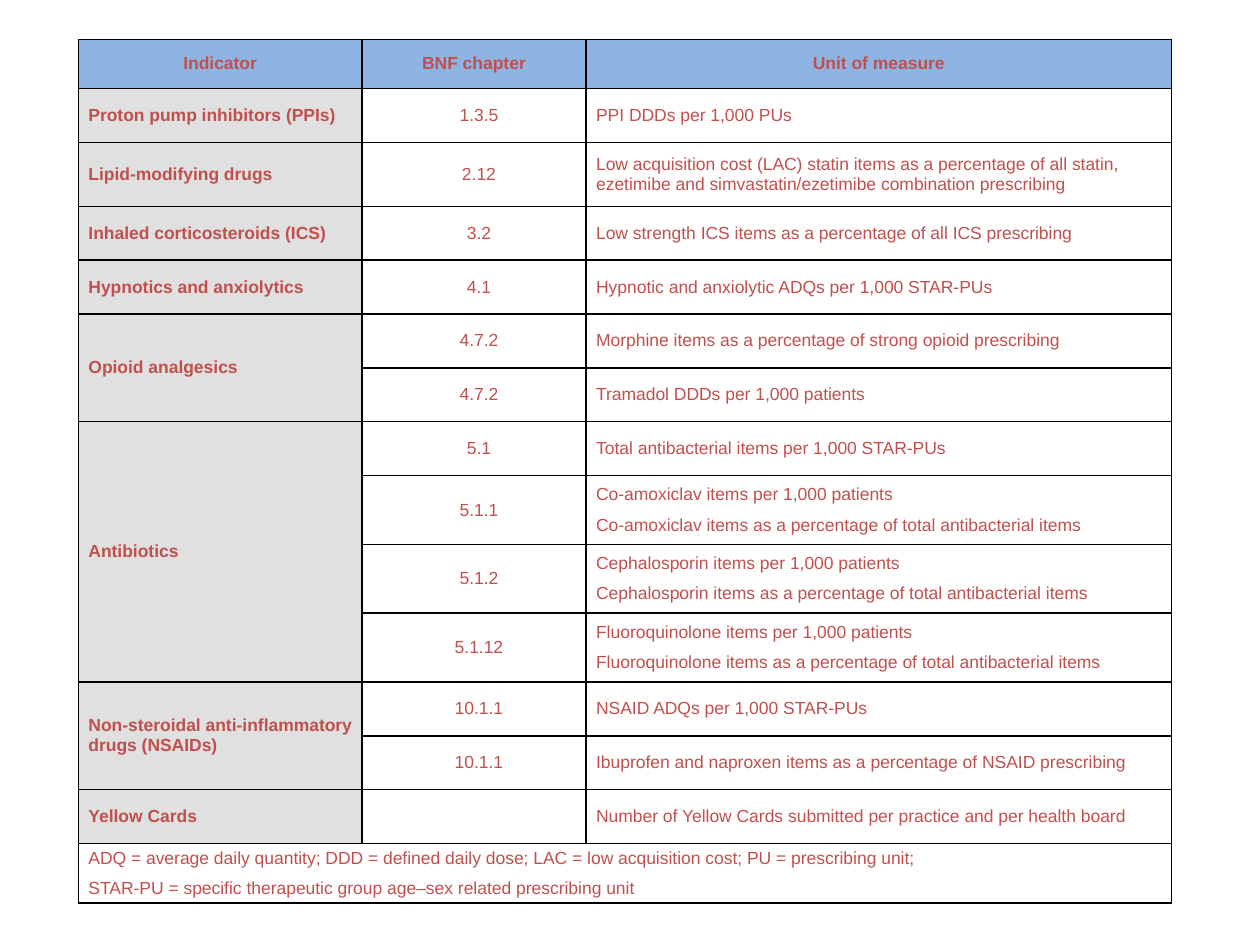
from dataclasses import dataclass

from lxml import etree
from pptx import Presentation
from pptx import util as u
from pptx.dml import color
from pptx.enum import text
from pptx.oxml import ns


@dataclass(frozen=True)
class Theme:
    font: str = "Arial"
    size: float = 10
    ink: str = "C0504D"
    header: str = "8EB4E3"
    label: str = "E0E0E0"
    plain: str = "FFFFFF"
    border: str = "000000"
    border_width: float = 1
    indent: float = 5.76
    gap: float = 3


THEME = Theme()
HEADINGS = ["Indicator", "BNF chapter", "Unit of measure"]
INDICATORS = [
    ("Proton pump inhibitors (PPIs)", [("1.3.5", ["PPI DDDs per 1,000 PUs"])]),
    ("Lipid-modifying drugs", [("2.12", [
        "Low acquisition cost (LAC) statin items as a percentage of all statin, "
        "ezetimibe and simvastatin/ezetimibe combination prescribing"])]),
    ("Inhaled corticosteroids (ICS)", [
        ("3.2", ["Low strength ICS items as a percentage of all ICS prescribing"])]),
    ("Hypnotics and anxiolytics", [
        ("4.1", ["Hypnotic and anxiolytic ADQs per 1,000 STAR-PUs"])]),
    ("Opioid analgesics", [
        ("4.7.2", ["Morphine items as a percentage of strong opioid prescribing"]),
        ("4.7.2", ["Tramadol DDDs per 1,000 patients"])]),
    ("Antibiotics", [("5.1", ["Total antibacterial items per 1,000 STAR-PUs"])] + [
        (chapter, [f"{drug} items per 1,000 patients",
                   f"{drug} items as a percentage of total antibacterial items"])
        for chapter, drug in [("5.1.1", "Co-amoxiclav"), ("5.1.2", "Cephalosporin"),
                              ("5.1.12", "Fluoroquinolone")]]),
    ("Non-steroidal anti-inflammatory drugs (NSAIDs)", [
        ("10.1.1", ["NSAID ADQs per 1,000 STAR-PUs"]),
        ("10.1.1", ["Ibuprofen and naproxen items as a percentage of NSAID prescribing"])]),
    ("Yellow Cards", [
        ("", ["Number of Yellow Cards submitted per practice and per health board"])]),
]
FOOTNOTE = [
    "ADQ = average daily quantity; DDD = defined daily dose; "
    "LAC = low acquisition cost; PU = prescribing unit;",
    "STAR-PU = specific therapeutic group age–sex related prescribing unit",
]
COLUMN_WIDTHS = [162, 128.2, 334.6]
ROW_HEIGHTS = [28.1] + [30.8, 36.5] + [30.8] * 5 + [39.3] * 3 + [30.8] * 3 + [34]


def draw_borders(cell):
    properties = cell._tc.get_or_add_tcPr()
    for side in ("a:lnL", "a:lnR", "a:lnT", "a:lnB"):
        line = etree.SubElement(properties, ns.qn(side), w=str(u.Pt(THEME.border_width)))
        fill = etree.SubElement(line, ns.qn("a:solidFill"))
        etree.SubElement(fill, ns.qn("a:srgbClr"), val=THEME.border)


def style_cell(cell, fill):
    draw_borders(cell)
    cell.fill.solid()
    cell.fill.fore_color.rgb = color.RGBColor.from_string(fill)
    cell.margin_left = cell.margin_right = cell.margin_top = cell.margin_bottom = u.Pt(0)
    cell.vertical_anchor = text.MSO_ANCHOR.MIDDLE


def write_cell(cell, lines, bold=False, centred=False, spaced=True):
    cell.text = "\n".join(lines)
    for para in cell.text_frame.paragraphs:
        para.alignment = text.PP_ALIGN.CENTER if centred else text.PP_ALIGN.LEFT
        para.font.name = THEME.font
        para.font.size = u.Pt(THEME.size)
        para.font.bold = bold
        para.font.color.rgb = color.RGBColor.from_string(THEME.ink)
        if spaced:
            para.space_before = para.space_after = u.Pt(THEME.gap)
            para._p.get_or_add_pPr().set("marL", str(u.Pt(THEME.indent)))


def add_indicator_table(page, left, top, width, height):
    frame = page.shapes.add_table(
        len(ROW_HEIGHTS), len(COLUMN_WIDTHS),
        u.Pt(left), u.Pt(top), u.Pt(width), u.Pt(height))
    table = frame.table
    table.first_row = table.horz_banding = False
    for column, share in zip(table.columns, COLUMN_WIDTHS):
        column.width = u.Pt(width * share / sum(COLUMN_WIDTHS))
    for row, share in zip(table.rows, ROW_HEIGHTS):
        row.height = u.Pt(height * share / sum(ROW_HEIGHTS))

    last = len(ROW_HEIGHTS) - 1
    for row in range(last + 1):
        for column in range(len(COLUMN_WIDTHS)):
            if row == 0:
                fill = THEME.header
            else:
                fill = THEME.label if column == 0 and row < last else THEME.plain
            cell = table.cell(row, column)
            style_cell(cell, fill)
            write_cell(cell, [])

    for column, heading in enumerate(HEADINGS):
        write_cell(table.cell(0, column), [heading], bold=True, centred=True, spaced=False)

    row = 1
    for indicator, measures in INDICATORS:
        label = table.cell(row, 0)
        if len(measures) > 1:
            label.merge(table.cell(row + len(measures) - 1, 0))
        write_cell(label, [indicator], bold=True)
        for chapter, units in measures:
            write_cell(table.cell(row, 1), [chapter], centred=True)
            write_cell(table.cell(row, 2), units)
            row += 1

    footnote = table.cell(last, 0)
    footnote.merge(table.cell(last, len(COLUMN_WIDTHS) - 1))
    write_cell(footnote, FOOTNOTE)


def main():
    deck = Presentation()
    deck.slide_width, deck.slide_height = u.Pt(720), u.Pt(540)
    page = deck.slides.add_slide(deck.slide_layouts[6])
    add_indicator_table(page, 44.8, 22.5, 624.6, 493.7)
    deck.save("out.pptx")


if __name__ == "__main__":
    main()
